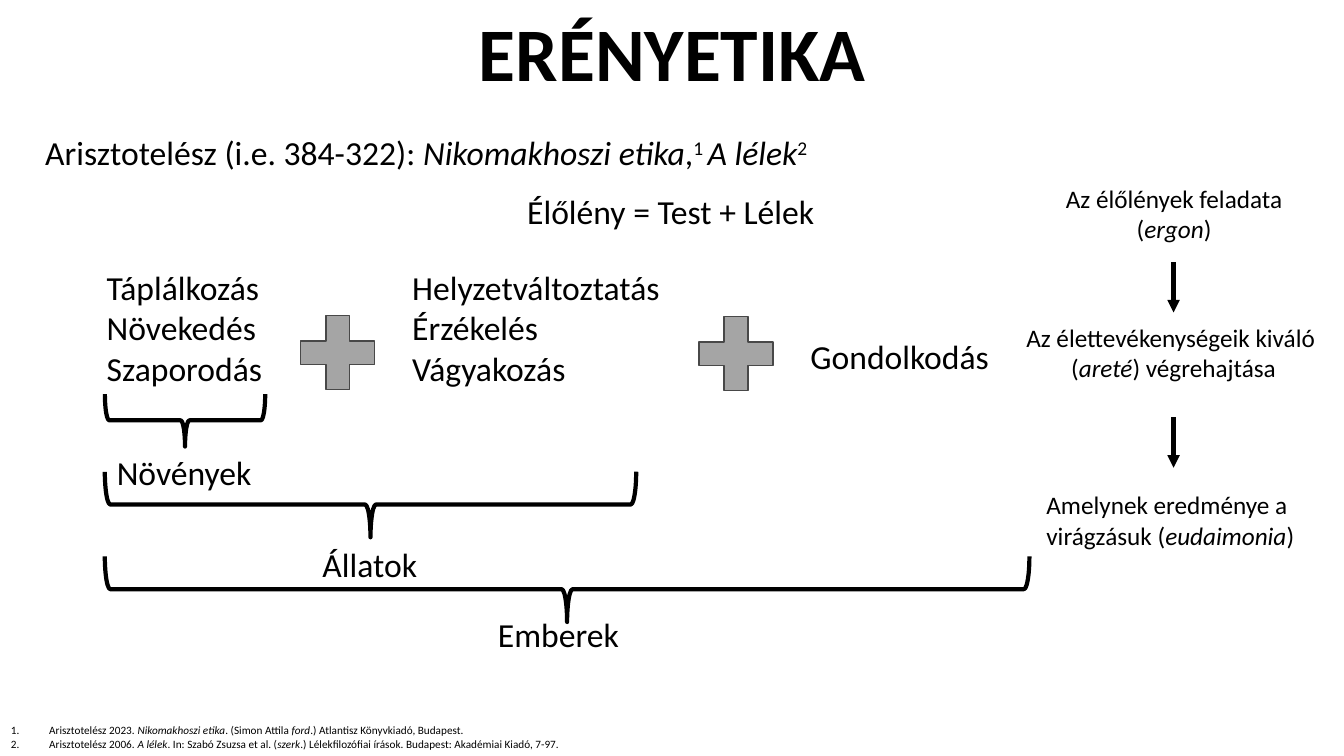
from dataclasses import dataclass

from lxml.etree import SubElement
from pptx import Presentation
from pptx.dml.color import RGBColor
from pptx.enum.shapes import MSO_CONNECTOR, MSO_SHAPE
from pptx.enum.text import MSO_AUTO_SIZE, PP_ALIGN
from pptx.oxml.ns import qn
from pptx.util import Inches, Pt


@dataclass(frozen=True)
class Theme:
    font: str = "Calibri"
    ink: RGBColor = RGBColor(0x00, 0x00, 0x00)
    plus_fill: RGBColor = RGBColor(0xA5, 0xA5, 0xA5)
    plus_line: RGBColor = RGBColor(0x48, 0x48, 0x48)
    title: int = 54
    body: int = 24
    step: int = 18
    note: int = 8
    stroke: int = 3


THEME = Theme()
BRACE_LEFT = 1.04
ARROW_X = 11.64
ARROW_LENGTH = 0.5


def add_marked_runs(para, marked, size):
    """Add runs to a paragraph: *...* is italic and ^...^ is superscript."""
    for i, part in enumerate(marked.split("*")):
        for j, words in enumerate(part.split("^")):
            if not words:
                continue
            span = para.add_run()
            span.text = words
            span.font.name = THEME.font
            span.font.size = Pt(size)
            span.font.color.rgb = THEME.ink
            span.font.italic = i % 2 == 1
            if j % 2:
                span.font._element.set("baseline", "30000")


def fit_to_text(frame):
    frame.word_wrap = False
    frame.auto_size = MSO_AUTO_SIZE.SHAPE_TO_FIT_TEXT


def set_title(page, text, left, top, width, height):
    title = page.shapes.title
    title.left, title.top = Inches(left), Inches(top)
    title.width, title.height = Inches(width), Inches(height)
    title.text_frame.text = text
    fit_to_text(title.text_frame)
    font = title.text_frame.paragraphs[0].runs[0].font
    font.name, font.size, font.bold = THEME.font, Pt(THEME.title), True
    font.color.rgb = THEME.ink


def add_text(page, lines, left, top, width, height,
             size=THEME.body, align=PP_ALIGN.LEFT, numbered=False):
    box = page.shapes.add_textbox(
        Inches(left), Inches(top), Inches(width), Inches(height))
    frame = box.text_frame
    fit_to_text(frame)
    for index, line in enumerate(lines):
        para = frame.add_paragraph() if index else frame.paragraphs[0]
        para.alignment = align
        if numbered:
            number_paragraph(para)
        add_marked_runs(para, line, size)


def number_paragraph(para):
    props = para._p.get_or_add_pPr()
    indent = Inches(0.38)
    props.set("marL", str(indent))
    props.set("indent", str(-indent))
    SubElement(props, qn("a:buAutoNum"), type="arabicPeriod")


def add_brace(page, top, width, height):
    """Add a downward brace; the sizes are those seen after the rotation."""
    left = BRACE_LEFT + (width - height) / 2
    brace = page.shapes.add_shape(
        MSO_SHAPE.LEFT_BRACE, Inches(left), Inches(top - (width - height) / 2),
        Inches(height), Inches(width))
    brace.rotation = 270
    brace.shadow.inherit = False
    brace.fill.background()
    brace.line.color.rgb = THEME.ink
    brace.line.width = Pt(THEME.stroke)


def add_plus(page, left, top):
    plus = page.shapes.add_shape(
        MSO_SHAPE.MATH_PLUS, Inches(left), Inches(top), Inches(1), Inches(1))
    plus.shadow.inherit = False
    plus.fill.solid()
    plus.fill.fore_color.rgb = THEME.plus_fill
    plus.line.color.rgb = THEME.plus_line
    plus.line.width = Pt(1)


def add_down_arrow(page, top):
    arrow = page.shapes.add_connector(
        MSO_CONNECTOR.STRAIGHT, Inches(ARROW_X), Inches(top),
        Inches(ARROW_X), Inches(top + ARROW_LENGTH))
    arrow.line.color.rgb = THEME.ink
    arrow.line.width = Pt(THEME.stroke)
    SubElement(arrow.line._get_or_add_ln(), qn("a:tailEnd"), type="triangle")
    SubElement(arrow._element.spPr, qn("a:effectLst"))


def add_soul_parts(page):
    add_text(page, ["Táplálkozás", "Növekedés", "Szaporodás"],
             0.96, 2.6, 1.76, 1.31)
    add_text(page, ["Helyzetváltoztatás", "Érzékelés", "Vágyakozás"],
             3.99, 2.6, 2.68, 1.31)
    add_text(page, ["Gondolkodás"], 7.94, 3.28, 1.99, 0.5)
    add_plus(page, 2.85, 3)
    add_plus(page, 6.8, 3.01)


def add_living_beings(page):
    add_brace(page, 3.91, 1.59, 0.52)
    add_text(page, ["Növények"], 1.06, 4.43, 1.55, 0.5)
    add_brace(page, 4.68, 5.27, 0.65)
    add_text(page, ["Állatok"], 3.1, 5.35, 1.15, 0.5)
    add_brace(page, 5.52, 9.17, 0.65)
    add_text(page, ["Emberek"], 4.84, 6.04, 1.41, 0.5)


def add_flourishing_steps(page):
    add_text(page, ["Az élőlények feladata", "(*ergon*)"],
             10.46, 1.77, 2.37, 0.71, THEME.step, PP_ALIGN.CENTER)
    add_down_arrow(page, 2.6)
    add_text(page, ["Az élettevékenységeik kiváló ", "(*areté*) végrehajtása"],
             10.06, 3.15, 3.16, 0.71, THEME.step, PP_ALIGN.CENTER)
    add_down_arrow(page, 4.14)
    add_text(page, ["Amelynek eredménye a", "virágzásuk (*eudaimonia*)"],
             10.28, 4.81, 2.72, 0.71, THEME.step)


def main():
    deck = Presentation()
    deck.slide_width, deck.slide_height = Inches(13.33), Inches(7.5)
    page = deck.slides.add_slide(deck.slide_layouts.get_by_name("Title Only"))

    set_title(page, "ERÉNYETIKA", 4.63, 0, 4.08, 1.01)
    add_text(page, ["Arisztotelész (i.e. 384-322): "
                    "*Nikomakhoszi etika*,^1 ^*A lélek*^2^"],
             0.35, 1.26, 8.01, 0.5)
    add_text(page, ["Élőlény = Test + Lélek"], 5.13, 1.84, 3.08, 0.5)
    add_soul_parts(page)
    add_living_beings(page)
    add_flourishing_steps(page)
    add_text(page, [
        "Arisztotelész 2023. *Nikomakhoszi etika*. (Simon Attila *ford*.) "
        "Atlantisz Könyvkiadó, Budapest.",
        "Arisztotelész 2006. *A lélek*. In: Szabó Zsuzsa et al. (*szerk*.) "
        "Lélekfilozófiai írások. Budapest: Akadémiai Kiadó, 7-97.",
    ], 0.01, 7.13, 5.69, 0.37, THEME.note, numbered=True)

    deck.save("out.pptx")


if __name__ == "__main__":
    main()
